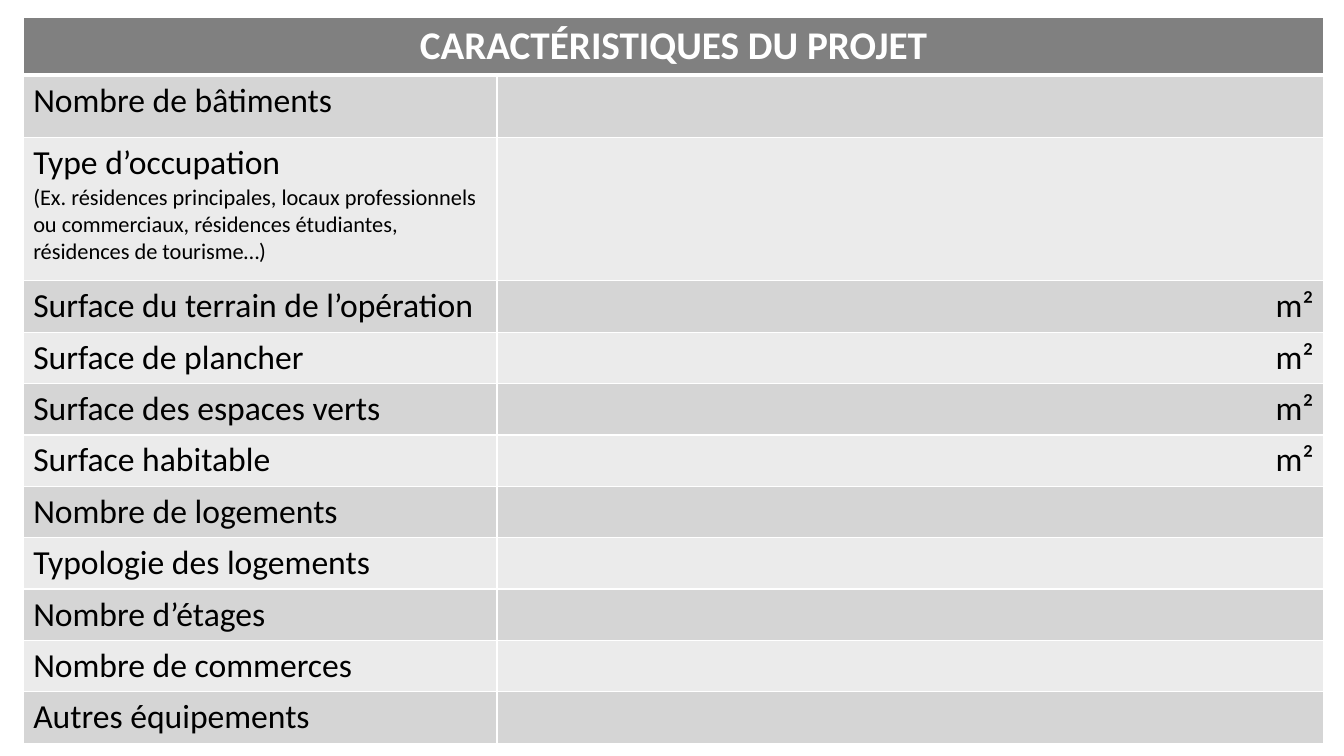
from lxml import etree
from pptx import Presentation
from pptx.dml.color import RGBColor
from pptx.enum import text
from pptx.oxml import ns
from pptx.util import Inches, Pt

WHITE = RGBColor(0xFF, 0xFF, 0xFF)
BLACK = RGBColor(0, 0, 0)
HEADER = RGBColor(0x80, 0x80, 0x80)
BANDS = RGBColor(0xD5, 0xD5, 0xD5), RGBColor(0xEB, 0xEB, 0xEB)
FONT = "Calibri"

TITLE = "CARACTÉRISTIQUES DU PROJET"
OCCUPATION_HINT = (
    "(Ex. résidences principales, locaux professionnels ou commerciaux, "
    "résidences étudiantes, résidences de tourisme…)"
)
ROWS = [
    ("Nombre de bâtiments", ""),
    ("Type d’occupation\n" + OCCUPATION_HINT, ""),
    ("Surface du terrain de l’opération", "m²"),
    ("Surface de plancher", "m²"),
    ("Surface des espaces verts", "m²"),
    ("Surface habitable", "m²"),
    ("Nombre de logements", ""),
    ("Typologie des logements", ""),
    ("Nombre d’étages", ""),
    ("Nombre de commerces", ""),
    ("Autres équipements", ""),
]
COLUMN_SHARES = 4.7 / 12.9, 8.2 / 12.9
ROW_HEIGHTS = [0.57, 0.62, 1.42] + [0.51] * 9


def set_borders(cell, top=1, bottom=1):
    """Draw white cell borders; widths are in points."""
    tc_pr = cell._tc.get_or_add_tcPr()
    widths = {"L": 1, "R": 1, "T": top, "B": bottom}
    for i, (side, width) in enumerate(widths.items()):
        ln = etree.Element(ns.qn(f"a:ln{side}"), w=str(Pt(width)))
        fill = etree.SubElement(ln, ns.qn("a:solidFill"))
        etree.SubElement(fill, ns.qn("a:srgbClr"), val=str(WHITE))
        tc_pr.insert(i, ln)


def fill_cell(cell, content, fill, align, size=24, color=BLACK, bold=False):
    """Write the text; any paragraph after the first is a smaller hint."""
    cell.fill.solid()
    cell.fill.fore_color.rgb = fill
    cell.text_frame.text = content
    for i, p in enumerate(cell.text_frame.paragraphs):
        p.alignment = align
        for r in p.runs:
            r.font.name = FONT
            r.font.size = Pt(16 if i else size)
            r.font.bold = bold
            r.font.color.rgb = color


def add_project_table(slide, left, top, width):
    height = Inches(sum(ROW_HEIGHTS))
    table = slide.shapes.add_table(
        len(ROW_HEIGHTS), len(COLUMN_SHARES), left, top, width, height
    ).table
    for column, share in zip(table.columns, COLUMN_SHARES):
        column.width = int(width * share)
    for row, row_height in zip(table.rows, ROW_HEIGHTS):
        row.height = Inches(row_height)

    align = text.PP_ALIGN
    table.cell(0, 0).merge(table.cell(0, 1))
    for column, title in enumerate((TITLE, "")):
        cell = table.cell(0, column)
        fill_cell(cell, title, HEADER, align.CENTER, 28, WHITE, True)
        set_borders(cell, bottom=3)

    for i, contents in enumerate(ROWS):
        for column, content in enumerate(contents):
            cell = table.cell(i + 1, column)
            fill_cell(cell, content, BANDS[i % 2],
                      align.RIGHT if column else align.LEFT)
            set_borders(cell, top=1 if i else 3)


def main():
    prs = Presentation()
    prs.slide_width, prs.slide_height = Inches(13.33), Inches(7.5)
    slide = prs.slides.add_slide(prs.slide_layouts[6])
    add_project_table(slide, Inches(0.23), Inches(0.17), Inches(12.9))
    prs.save("out.pptx")


if __name__ == "__main__":
    main()
